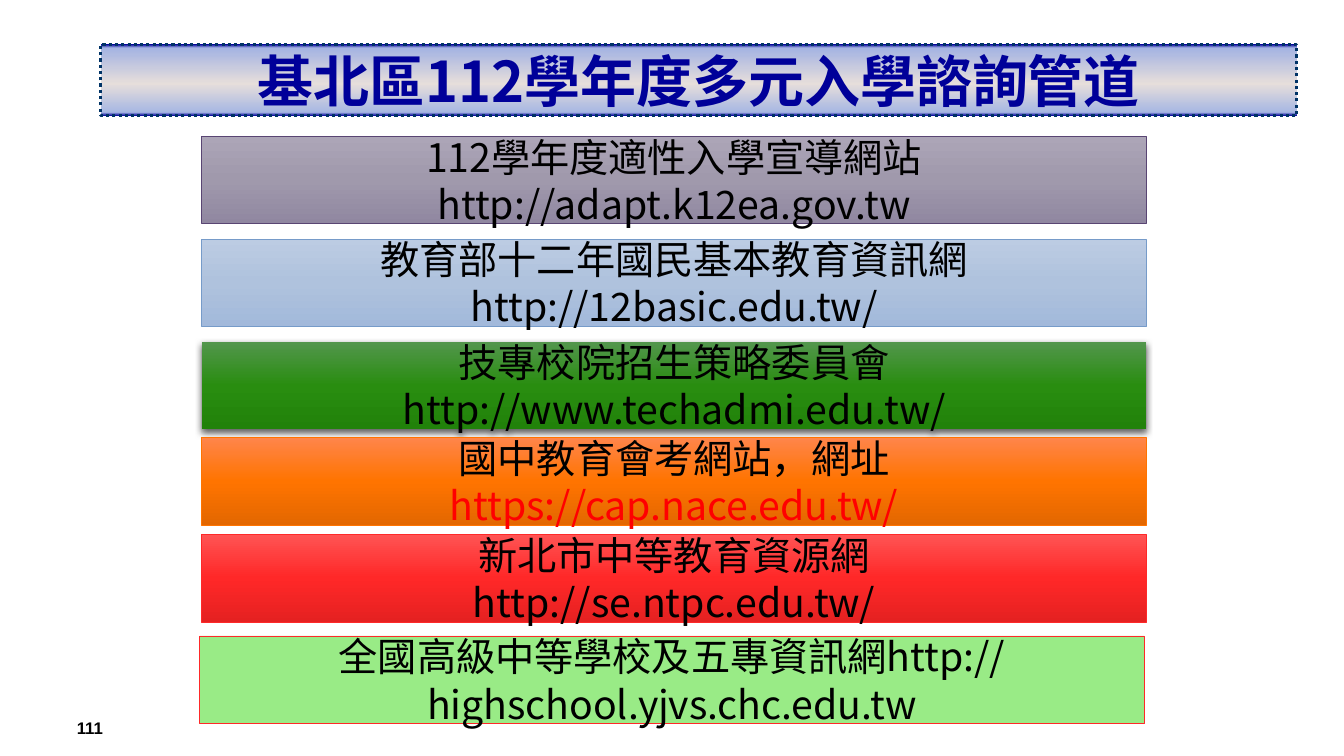
import pptx
import pptx.util
import pptx.dml.color
import pptx.enum.dml
import pptx.enum.shapes
import pptx.enum.text
import pptx.oxml
import pptx.oxml.ns

RGB = pptx.dml.color.RGBColor
ALIGN = pptx.enum.text.PP_ALIGN
PX = 9144  # EMU in one px, 100 px to the inch
SANS = "Noto Sans CJK SC"

BLACK = RGB(0x00, 0x00, 0x00)
RED = RGB(0xFF, 0x00, 0x00)
NAVY = RGB(0x00, 0x00, 0x99)
TEAL = RGB(0x00, 0x33, 0x66)
PLUM = RGB(0x59, 0x45, 0x73)
BLUE = RGB(0x76, 0x9B, 0xC9)
ORANGE = RGB(0xFF, 0x74, 0x00)
ROSE = RGB(0xFE, 0x29, 0x29)
LIME = RGB(0x99, 0xEB, 0x86)

BANNER = [(0, NAVY), (5, RGB(0xA4, 0xB3, 0xE2)), (55, RGB(0xE6, 0xDE, 0xDB)),
          (95, RGB(0xA7, 0xB7, 0xE3)), (100, NAVY)]


def ramp(top, mid, low):
    return [(0, top), (50, mid), (100, low)]


PLUMS = ramp(RGB(0xAC, 0xA5, 0xB7), RGB(0xA0, 0x99, 0xAC), RGB(0x90, 0x87, 0xA0))
BLUES = ramp(RGB(0xBC, 0xCC, 0xE3), RGB(0xAF, 0xC2, 0xDD), RGB(0xA2, 0xB9, 0xDB))
GREENS = ramp(RGB(0x53, 0x96, 0x4D), RGB(0x29, 0x8D, 0x10), RGB(0x21, 0x82, 0x0A))
ORANGES = ramp(RGB(0xFF, 0x85, 0x4B), ORANGE, RGB(0xE3, 0x67, 0x00))
REDS = ramp(RGB(0xFF, 0x54, 0x54), RGB(0xFF, 0x28, 0x28), RGB(0xE5, 0x21, 0x21))

# Left, top, fill, line, shadow, then (text, colour) for each paragraph
SITES = [
    (200, 135, PLUMS, PLUM, False,
     [("112學年度適性入學宣導網站", BLACK), ("http://adapt.k12ea.gov.tw", BLACK)]),
    (200, 237, BLUES, BLUE, False,
     [("教育部十二年國民基本教育資訊網", BLACK), ("http://12basic.edu.tw/", BLACK)]),
    (200, 339, GREENS, None, True,
     [("技專校院招生策略委員會", BLACK), ("http://www.techadmi.edu.tw/", BLACK)]),
    (200, 434, ORANGES, ORANGE, False,
     [("國中教育會考網站，網址", BLACK), ("https://cap.nace.edu.tw/", RED)]),
    (200, 530, REDS, ROSE, False,
     [("新北市中等教育資源網", BLACK), ("http://se.ntpc.edu.tw/", BLACK)]),
    (198, 631, LIME, ROSE, False,
     [("全國高級中等學校及五專資訊網http://highschool.yjvs.chc.edu.tw", BLACK)]),
]


def place(box):
    return [v * PX for v in box]


def xml(text):
    return pptx.oxml.parse_xml(
        text.replace(">", " " + pptx.oxml.ns.nsdecls("a") + ">", 1))


def blend(fill, stops):
    """Fill from top to bottom with any number of stops."""
    fill.gradient()
    fill.gradient_angle = 270
    old = fill.gradient_stops[0]._gs.getparent()
    marks = "".join(
        f'<a:gs pos="{pos * 1000}"><a:srgbClr val="{color}"/></a:gs>'
        for pos, color in stops)
    old.getparent().replace(old, xml(f"<a:gsLst>{marks}</a:gsLst>"))


def shade(shape):
    shape._element.spPr.append(xml(
        '<a:effectLst><a:outerShdw blurRad="57150" dist="19050" dir="5400000"'
        ' algn="ctr" rotWithShape="0"><a:srgbClr val="000000">'
        '<a:alpha val="63000"/></a:srgbClr></a:outerShdw></a:effectLst>'))


def write(para, text, size=28, color=BLACK, bold=False, font=SANS,
          align=ALIGN.CENTER):
    para.alignment = align
    run = para.add_run()
    run.text = text
    run.font.size = pptx.util.Pt(size)
    run.font.bold = bold
    run.font.name = font
    run.font.color.rgb = color
    run._r.get_or_add_rPr().find(pptx.oxml.ns.qn("a:latin")).addnext(
        xml(f'<a:ea typeface="{font}"></a:ea>'))


def middle(shape):
    frame = shape.text_frame
    frame.word_wrap = True
    frame.vertical_anchor = pptx.enum.text.MSO_ANCHOR.MIDDLE
    return frame


def bar(slide, box, fill, line, width=0.5, shadow=False):
    shape = slide.shapes.add_shape(
        pptx.enum.shapes.MSO_SHAPE.RECTANGLE, *place(box))
    if isinstance(fill, list):
        blend(shape.fill, fill)
    else:
        shape.fill.solid()
        shape.fill.fore_color.rgb = fill
    if line is None:
        shape.line.fill.background()
    else:
        shape.line.color.rgb = line
        shape.line.width = pptx.util.Pt(width)
    if shadow:
        shade(shape)
    else:
        shape.shadow.inherit = False
    return shape


def title(slide, box):
    shape = bar(slide, box, BANNER, TEAL, width=2.25)
    shape.line.dash_style = pptx.enum.dml.MSO_LINE.ROUND_DOT
    para = middle(shape).paragraphs[0]
    write(para, "基北區112學年度多元入學諮詢管道", size=40, color=NAVY, bold=True)
    props = para._p.get_or_add_pPr()
    props.set("marL", str(50 * PX))
    props.set("indent", str(-50 * PX))


def site(slide, box, fill, line, shadow, lines):
    frame = middle(bar(slide, box, fill, line, shadow=shadow))
    for i, (text, color) in enumerate(lines):
        para = frame.add_paragraph() if i else frame.paragraphs[0]
        write(para, text, color=color)


def number(slide, box):
    frame = middle(slide.shapes.add_textbox(*place(box)))
    write(frame.paragraphs[0], "111", size=12, bold=True, font="Arial",
          align=ALIGN.RIGHT)


def main():
    deck = pptx.Presentation()
    deck.slide_width, deck.slide_height = 1333 * PX, 750 * PX
    slide = deck.slides.add_slide(deck.slide_layouts[6])
    title(slide, (100, 44, 1186, 71))
    for left, top, *look in SITES:
        site(slide, (left, top, 937, 87), *look)
    number(slide, (29, 709, 83, 25))
    deck.save("out.pptx")


if __name__ == "__main__":
    main()
